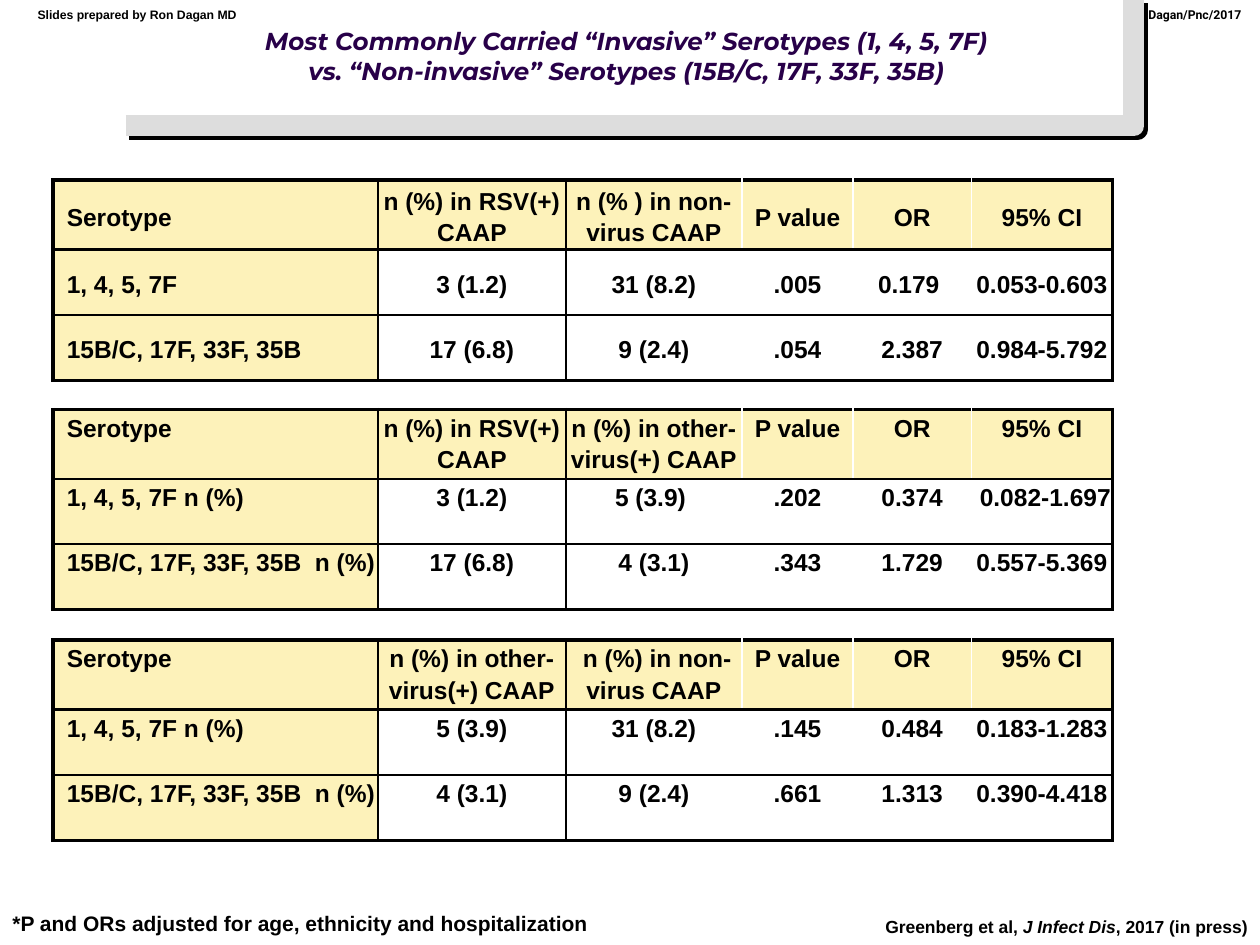
"""Build the slide comparing carriage of invasive and non-invasive serotypes."""
from pptx import Presentation
from pptx.dml.color import RGBColor as Rgb
from pptx.enum.text import MSO_ANCHOR as Anchor, PP_ALIGN as Align
from pptx.oxml.ns import qn
from pptx.util import Inches, Pt
from lxml.etree import SubElement

COLORS = {"ink": "000000", "title": "280049", "header": "FDF2BA",
          "white": "FFFFFF", "swoosh": "DDDDDD"}
FORMATS = {
    "title": {"name": "Montserrat", "size": Pt(14), "bold": True, "italic": True},
    "table": {"name": "Arial", "size": Pt(14), "bold": True},
    "credit": {"name": "Arial", "size": Pt(7), "bold": True},
    "tag": {"name": "Roboto", "size": Pt(7), "bold": True},
    "note": {"name": "Arial", "size": Pt(12), "bold": True},
    "citation": {"name": "Arial", "size": Pt(10), "bold": True},
}
COLUMNS = [2.58, 1.49, 1.4, 0.88, 0.94, 1.12]
ROWS = [0.55, 0.52, 0.52]
STATISTICS = ["P value", "OR", "95% CI"]
TABLES = [
    (1.43, Anchor.MIDDLE, [
        ["Serotype", "n (%) in RSV(+) CAAP", "n (% ) in non-virus CAAP", *STATISTICS],
        ["1, 4, 5, 7F", "3 (1.2)", "31 (8.2)", ".005", "0.179 ", "0.053-0.603"],
        ["15B/C, 17F, 33F, 35B", "17 (6.8)", "9 (2.4)", ".054", "2.387", "0.984-5.792"],
    ]),
    (3.25, Anchor.TOP, [
        ["Serotype", "n (%) in RSV(+)\nCAAP", "n (%) in other- virus(+) CAAP", *STATISTICS],
        ["1, 4, 5, 7F n (%)", "3 (1.2)", "5 (3.9) ", ".202", "0.374", " 0.082-1.697"],
        ["15B/C, 17F, 33F, 35B  n (%)", "17 (6.8)", "4 (3.1)", ".343", "1.729", "0.557-5.369"],
    ]),
    (5.08, Anchor.TOP, [
        ["Serotype", "n (%) in other- virus(+) CAAP", " n (%) in non-virus CAAP", *STATISTICS],
        ["1, 4, 5, 7F n (%)", "5 (3.9)", "31 (8.2)", ".145", "0.484", "0.183-1.283"],
        ["15B/C, 17F, 33F, 35B  n (%)", "4 (3.1)", "9 (2.4)", ".661", "1.313", "0.390-4.418"],
    ]),
]
SWOOSH = [
    [(1.36, 0.55), (0.73, 0.69), (0.09, 0.83), (1.31, 0.88)],
    [(1.31, 0.88), (2.54, 0.93), (7.46, 0.91), (8.69, 0.84)],
    [(8.69, 0.84), (9.92, 0.78), (9.32, 0.63), (8.71, 0.49)],
]


def curve_point(curve, t):
    """Return the point of a cubic curve at t."""
    weights = [(1 - t) ** 3, 3 * t * (1 - t) ** 2, 3 * t * t * (1 - t), t ** 3]
    return tuple(sum(w * p[axis] for w, p in zip(weights, curve)) for axis in (0, 1))


class SlideBuilder:
    """Hold the style and the current slide."""

    def __init__(self, slide):
        """Keep the slide to draw on."""
        self.slide = slide

    def set_text(self, frame, lines, style, align=Align.LEFT, color="ink", spacing=None):
        """Fill a frame with paragraphs of runs, where every second run is italic."""
        frame.word_wrap = True
        for index, line in enumerate(lines):
            para = frame.add_paragraph() if index else frame.paragraphs[0]
            para.alignment = align
            para.space_before = Pt(0)
            para.line_spacing = spacing
            for order, text in enumerate(line):
                span = para.add_run()
                span.text = text
                span.font.italic = order % 2 == 1
                span.font.color.rgb = Rgb.from_string(COLORS[color])
                for name, value in FORMATS[style].items():
                    setattr(span.font, name, value)

    def title(self, place, lines):
        """Fill and place the title placeholder."""
        box = self.slide.shapes.title
        box.left, box.top, box.width, box.height = map(Inches, place)
        box.text_frame.vertical_anchor = Anchor.TOP
        self.set_text(box.text_frame, lines, "title", Align.CENTER, "title")

    def text(self, place, runs, style, align=Align.LEFT):
        """Add a one-paragraph text box."""
        box = self.slide.shapes.add_textbox(*map(Inches, place))
        self.set_text(box.text_frame, [runs], style, align)

    def swoosh(self, curves, steps=30):
        """Add the thick curved line with its hard shadow."""
        points = [curve_point(curve, step / steps)
                  for curve in curves for step in range(1, steps + 1)]
        builder = self.slide.shapes.build_freeform(*curves[0][0], scale=Inches(1))
        builder.add_line_segments(points, close=False)
        shape = builder.convert_to_shape()
        shape.fill.background()
        shape.line.color.rgb = Rgb.from_string(COLORS["swoosh"])
        shape.line.width = Pt(12)
        shape.shadow.inherit = False
        effects = shape._element.spPr.find(qn("a:effectLst"))
        shadow = SubElement(effects, qn("a:outerShdw"), dist=str(Pt(2.8)),
                            dir="2700000", algn="ctr", rotWithShape="0")
        SubElement(shadow, qn("a:srgbClr"), val=COLORS["ink"])

    def borders(self, cell, row, column):
        """Draw heavy outer edges and thin inner ones on a cell."""
        def upright(edge):
            if edge in (0, len(COLUMNS)):
                return "ink", 2.25
            return ("ink", 1.5) if edge <= 2 else ("white", 1)

        def level(edge):
            return "ink", 2.25 if edge in (0, len(ROWS)) else 1.5

        edges = {"a:lnL": upright(column), "a:lnR": upright(column + 1),
                 "a:lnT": level(row), "a:lnB": level(row + 1)}
        properties = cell._tc.get_or_add_tcPr()
        for position, (tag, (color, width)) in enumerate(edges.items()):
            line = SubElement(properties, qn(tag), w=str(Pt(width)))
            fill = SubElement(line, qn("a:solidFill"))
            SubElement(fill, qn("a:srgbClr"), val=COLORS[color])
            properties.insert(position, line)

    def table(self, top, anchor, rows):
        """Add one comparison table."""
        frame = self.slide.shapes.add_table(
            len(ROWS), len(COLUMNS), Inches(0.42), Inches(top),
            Inches(sum(COLUMNS)), Inches(sum(ROWS)))
        table = frame.table
        table.first_row = table.horz_banding = False
        for column, width in zip(table.columns, COLUMNS):
            column.width = Inches(width)
        for r, (row, height) in enumerate(zip(rows, ROWS)):
            table.rows[r].height = Inches(height)
            for c, text in enumerate(row):
                cell = table.cell(r, c)
                layout = {"margin_left": Inches(0.01 if c else 0.11),
                          "margin_right": Inches(0.01), "margin_top": Inches(0.01),
                          "margin_bottom": 0, "vertical_anchor": anchor}
                for name, value in layout.items():
                    setattr(cell, name, value)
                if r == 0 or c == 0:
                    cell.fill.solid()
                    cell.fill.fore_color.rgb = Rgb.from_string(COLORS["header"])
                else:
                    cell.fill.background()
                self.borders(cell, r, c)
                self.set_text(cell.text_frame, [[line] for line in text.split("\n")], "table",
                              Align.CENTER if c else Align.LEFT, spacing=1.15)


def main():
    """Build and save the deck."""
    deck = Presentation()
    deck.slide_width, deck.slide_height = Inches(10), Inches(7.5)
    page = SlideBuilder(deck.slides.add_slide(deck.slide_layouts[5]))
    page.swoosh(SWOOSH)
    page.text((8.69, 0.01, 1.26, 0.22), ["Dagan/Pnc/2017"], "tag", Align.RIGHT)
    page.text((0.2, 0.01, 3.3, 0.22), ["Slides prepared by Ron Dagan MD"], "credit")
    page.title((0.5, 0.16, 9, 0.71), [
        ["Most Commonly Carried “Invasive” Serotypes (1, 4, 5, 7F) "],
        ["vs. “Non-invasive” Serotypes (15B/C, 17F, 33F, 35B) "]])
    for top, anchor, rows in TABLES:
        page.table(top, anchor, rows)
    page.text((0, 7.18, 5.32, 0.3),
              ["*P and ORs adjusted for age, ethnicity and hospitalization"], "note")
    page.text((5.07, 7.22, 4.93, 0.27),
              ["Greenberg et al, ", "J Infect Dis", ", 2017 (in press)"],
              "citation", Align.RIGHT)
    deck.save("out.pptx")


if __name__ == "__main__":
    main()
